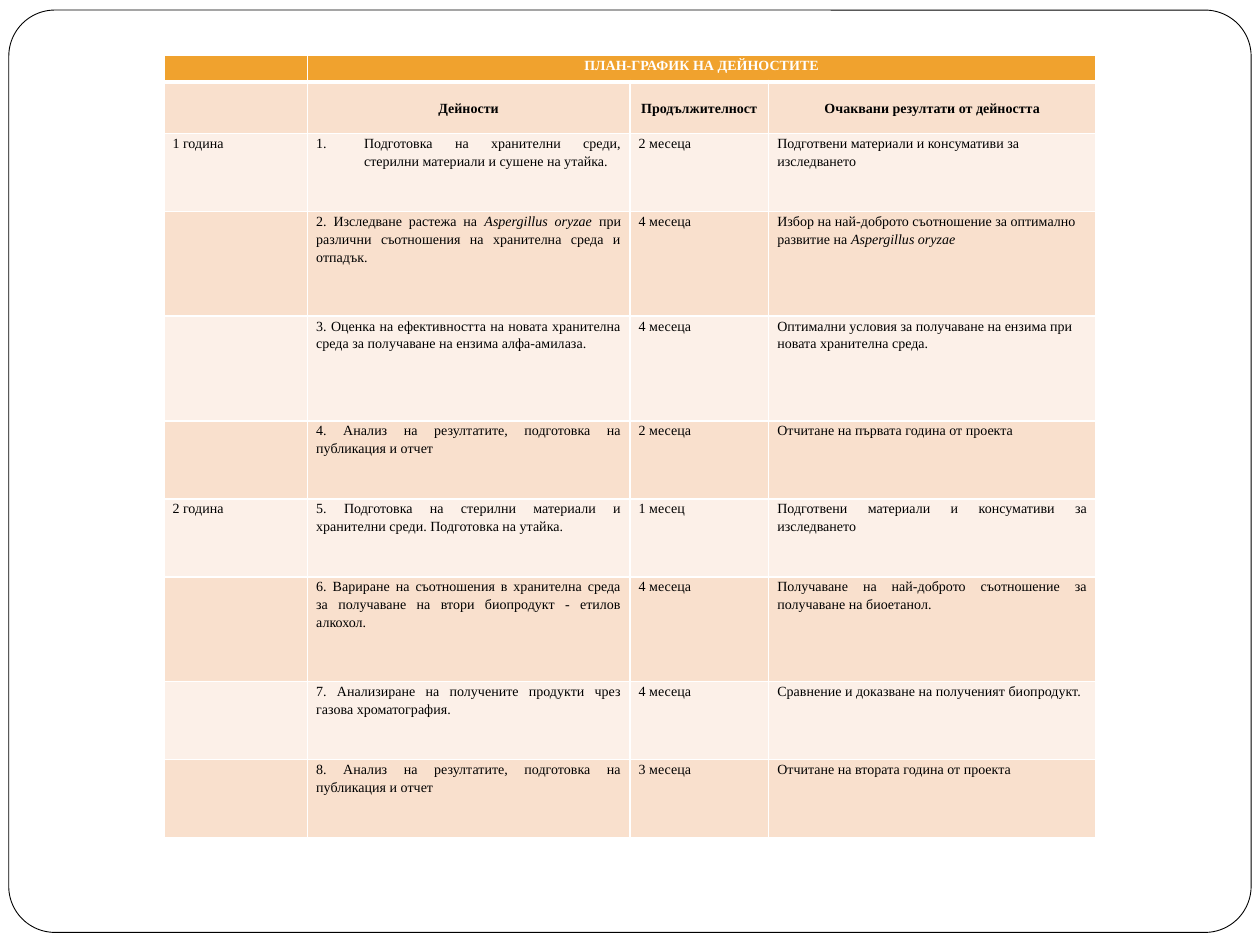
from dataclasses import dataclass

from lxml.etree import SubElement
from pptx import Presentation
from pptx.dml.color import RGBColor
from pptx.enum.shapes import MSO_SHAPE
from pptx.enum.text import MSO_ANCHOR, PP_ALIGN
from pptx.oxml.ns import qn
from pptx.util import Inches, Pt


@dataclass(frozen=True)
class Theme:
    font: str = "Times New Roman"
    size: int = 8
    white: str = "FFFFFF"
    black: str = "000000"
    title_fill: str = "F0A22E"
    bands: tuple = ("F9E0CD", "FCF0E8")


theme = Theme()

COL_WIDTHS = [1.14, 2.56, 1.1, 2.6]
ROW_HEIGHTS = [0.21, 0.41, 0.62, 0.83, 0.83, 0.62, 0.62, 0.83, 0.62, 0.62]

# Asterisks enclose italic text
ROWS = [
    ["", "ПЛАН-ГРАФИК НА ДЕЙНОСТИТЕ", "", ""],
    ["", "Дейности", "Продължителност", "Очаквани резултати от дейността"],
    ["1 година", "Подготовка на хранителни среди, стерилни материали и сушене на утайка.",
     "2 месеца", "Подготвени материали и консумативи за изследването"],
    ["", "2. Изследване растежа на *Aspergillus oryzae* при различни съотношения "
     "на хранителна среда и отпадък.",
     "4 месеца", "Избор на най-доброто съотношение за оптимално развитие на *Aspergillus oryzae*"],
    ["", "3. Оценка на ефективността на новата хранителна среда за получаване на "
     "ензима алфа-амилаза.",
     "4 месеца", "Оптимални условия за получаване на ензима при новата хранителна среда."],
    ["", "4. Анализ на резултатите, подготовка на публикация и отчет",
     "2 месеца", "Отчитане на първата година от проекта"],
    ["2 година", "5. Подготовка на стерилни материали и хранителни среди. Подготовка на утайка.",
     "1 месец", "Подготвени материали и консумативи за изследването"],
    ["", "6. Вариране на съотношения в хранителна среда за получаване на втори "
     "биопродукт - етилов алкохол.",
     "4 месеца", "Получаване на най-доброто съотношение за получаване на биоетанол."],
    ["", "7. Анализиране на получените продукти чрез газова хроматография.",
     "4 месеца", "Сравнение и доказване на полученият биопродукт."],
    ["", "8. Анализ на резултатите, подготовка на публикация и отчет",
     "3 месеца", "Отчитане на втората година от проекта"],
]
SECOND_YEAR_ROW = 6


def set_borders(cell, top, bottom):
    tcPr = cell._tc.get_or_add_tcPr()
    for side, width in (("L", 1), ("R", 1), ("T", top), ("B", bottom)):
        ln = SubElement(tcPr, qn(f"a:ln{side}"), w=str(Pt(width)))
        SubElement(SubElement(ln, qn("a:solidFill")), qn("a:srgbClr"), val=theme.white)


def fill_text(p, text, color, bold):
    for i, part in enumerate(text.split("*")):
        if part:
            r = p.add_run()
            r.text = part
            r.font.name = theme.font
            r.font.size = Pt(theme.size)
            r.font.bold = bold
            r.font.italic = i % 2 == 1
            r.font.color.rgb = RGBColor.from_string(color)
    # Keeps empty cells from stretching their row
    p._p.get_or_add_endParaRPr().set("sz", str(theme.size * 100))


prs = Presentation()
prs.slide_width, prs.slide_height = Inches(10), Inches(7.5)
s = prs.slides.add_slide(prs.slide_layouts[6])

# Rounded page frame
frame = s.shapes.add_shape(MSO_SHAPE.ROUNDED_RECTANGLE,
                           Inches(0.07), Inches(0.08), Inches(9.86), Inches(7.32))
frame.adjustments[0] = 0.05
frame.shadow.inherit = False
frame.fill.solid()
frame.fill.fore_color.rgb = RGBColor.from_string(theme.white)
frame.line.color.rgb = RGBColor.from_string(theme.black)
frame.line.width = Pt(0.5)

# Schedule table
table = s.shapes.add_table(len(ROWS), len(COL_WIDTHS), Inches(1.3), Inches(0.44),
                           Inches(sum(COL_WIDTHS)), Inches(sum(ROW_HEIGHTS))).table
table.first_row = table.horz_banding = False
for column, width in zip(table.columns, COL_WIDTHS):
    column.width = Inches(width)
for row, height in zip(table.rows, ROW_HEIGHTS):
    row.height = Inches(height)
table.cell(0, 1).merge(table.cell(0, 3))

for i, texts in enumerate(ROWS):
    heading = i < 2
    for j, text in enumerate(texts):
        cell = table.cell(i, j)
        set_borders(cell, top=3 if i == 1 else 1, bottom=3 if i == 0 else 1)
        cell.fill.solid()
        cell.fill.fore_color.rgb = RGBColor.from_string(
            theme.title_fill if i == 0 else theme.bands[(i - 1) % 2])
        cell.margin_left = cell.margin_right = Inches(0.07)
        cell.margin_top = cell.margin_bottom = 0
        cell.vertical_anchor = MSO_ANCHOR.MIDDLE if i == 1 else MSO_ANCHOR.TOP

        p = cell.text_frame.paragraphs[0]
        p.line_spacing = 1.15
        if heading:
            p.alignment = PP_ALIGN.CENTER
        elif j < 2 or i >= SECOND_YEAR_ROW:
            p.alignment = PP_ALIGN.JUSTIFY
        else:
            p.alignment = PP_ALIGN.LEFT
        fill_text(p, text, theme.white if i == 0 else theme.black, heading)

# Automatic number on the first activity
pPr = table.cell(2, 1).text_frame.paragraphs[0]._p.get_or_add_pPr()
pPr.set("marL", str(Inches(0.38)))
pPr.set("indent", str(Inches(-0.38)))
SubElement(pPr, qn("a:buFont"), typeface="+mj-lt")
SubElement(pPr, qn("a:buAutoNum"), type="arabicPeriod")

prs.save("out.pptx")
